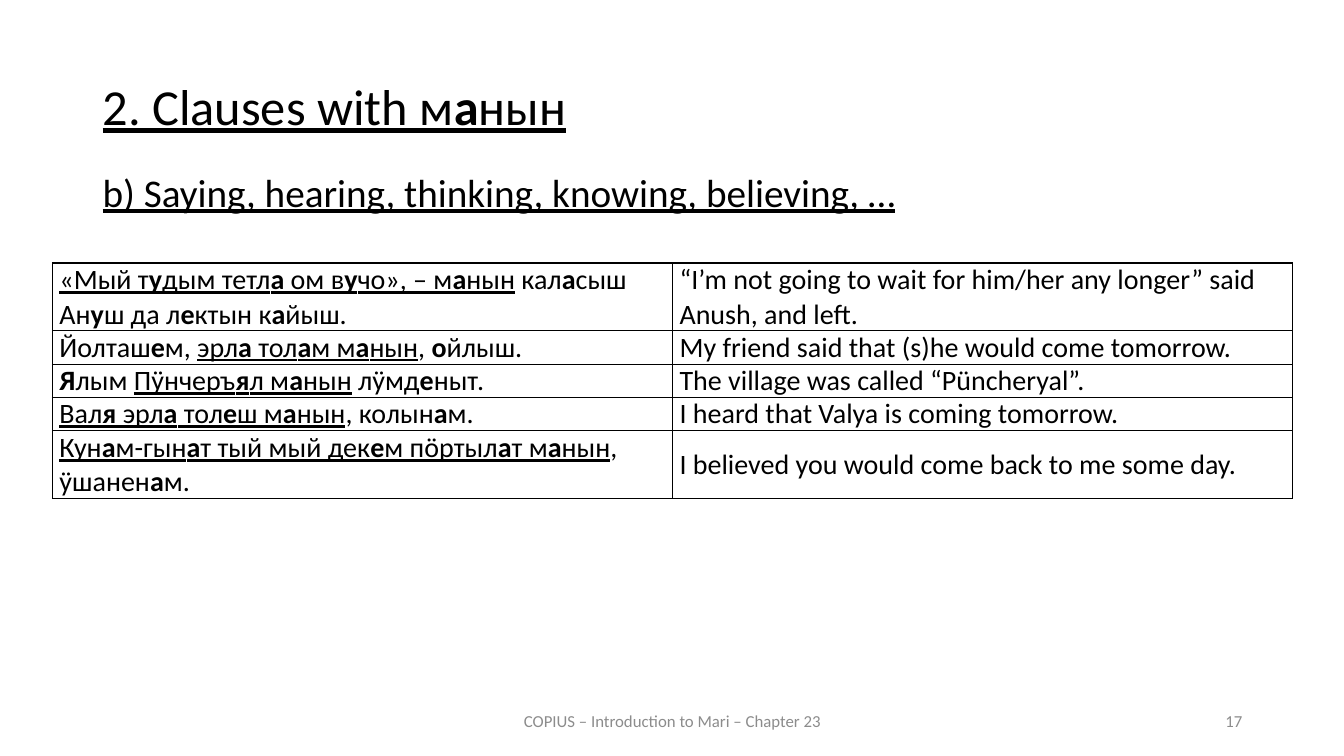
"""Builds the slide on Mari clauses with манын: headings, example tables and footer."""
from lxml import etree
from pptx import Presentation
from pptx.dml.color import RGBColor
from pptx.enum.text import MSO_ANCHOR, PP_ALIGN
from pptx.oxml.ns import qn
from pptx.util import Inches, Pt

LEFT, CENTER, RIGHT, JUSTIFY = PP_ALIGN.LEFT, PP_ALIGN.CENTER, PP_ALIGN.RIGHT, PP_ALIGN.JUSTIFY
TOP, MIDDLE = MSO_ANCHOR.TOP, MSO_ANCHOR.MIDDLE
FONT = "Calibri"
BLACK, GREY = "000000", "8C8C8C"

QUOTED_SPEECH = [
    ("_«Мый т*у*дым тетл*а* ом в*у*чо», – м*а*нын_ кал*а*сыш Ан*у*ш да л*е*ктын к*а*йыш.",
     "“I’m not going to wait for him/her any longer” said Anush, and left."),
    ("Йолташ*е*м, _эрл*а* тол*а*м м*а*нын_, *о*йлыш.",
     "My friend said that (s)he would come tomorrow."),
    ("*Я*лым _Пӱнчеръ*я*л м*а*нын_ лӱмд*е*ныт.",
     "The village was called “Püncheryal”."),
]
HEARING_BELIEVING = [
    ("_Вал*я* эрл*а* тол*е*ш м*а*нын_, колын*а*м.",
     "I heard that Valya is coming tomorrow."),
    ("_Кун*а*м-гын*а*т тый мый дек*е*м пӧртыл*а*т м*а*нын_, ӱшанен*а*м.",
     "I believed you would come back to me some day."),
]


def color(hex_string):
    return RGBColor.from_string(hex_string)


def write(frame, text, size=20, fill=BLACK, align=LEFT, line_spacing=None, before=None):
    """Write text in which * toggles bold and _ toggles underline."""
    frame.word_wrap = True
    paragraph = frame.paragraphs[0]
    paragraph.alignment = align
    if line_spacing:
        paragraph.line_spacing = line_spacing
    if before:
        paragraph.space_before = Pt(before)
    for u, underlined_part in enumerate(text.split("_")):
        if u:
            underline = not underline
        else:
            underline = False
        for b, part in enumerate(underlined_part.split("*")):
            if part:
                run = paragraph.add_run()
                run.text = part
                run.font.name = FONT
                run.font.size = Pt(size)
                run.font.color.rgb = color(fill)
                run.font.bold = b % 2 == 1
                run.font.underline = underline


class LessonSlide:
    """Holds the slide and draws its headings, tables and footer."""

    def __init__(self, slide):
        self.slide = slide

    def text(self, box, text, anchor=TOP, **style):
        frame = self.slide.shapes.add_textbox(*map(Inches, box)).text_frame
        frame.vertical_anchor = anchor
        write(frame, text, **style)

    def border(self, cell):
        properties = cell._tc.get_or_add_tcPr()
        for side in ("a:lnL", "a:lnR", "a:lnT", "a:lnB"):
            line = etree.SubElement(properties, qn(side), w=str(Pt(1)))
            solid = etree.SubElement(line, qn("a:solidFill"))
            etree.SubElement(solid, qn("a:srgbClr"), val=BLACK)

    def examples(self, top, pairs, heights):
        frame = self.slide.shapes.add_table(
            len(pairs), 2, Inches(0.52), Inches(top), Inches(12.3), Inches(sum(heights)))
        table = frame.table
        table.first_row = table.horz_banding = False
        for row, pair, height in zip(table.rows, pairs, heights):
            row.height = Inches(height)
            for cell, sentence in zip(row.cells, pair):
                cell.margin_left = cell.margin_right = Inches(0.07)
                cell.margin_top = cell.margin_bottom = 0
                cell.vertical_anchor = MIDDLE
                self.border(cell)
                cell.fill.background()
                write(cell.text_frame, sentence)


def main():
    deck = Presentation()
    deck.slide_width, deck.slide_height = Inches(13.33), Inches(7.5)
    lesson = LessonSlide(deck.slides.add_slide(deck.slide_layouts[6]))
    lesson.text((0.92, 0.76, 11.5, 0.83), "_2. Clauses with м*а*нын_",
                size=36, align=JUSTIFY, line_spacing=0.9, before=12)
    lesson.text((0.92, 1.67, 11.5, 0.58),
                "_b) Saying, hearing, thinking, knowing, believing, …_",
                size=28, line_spacing=0.9, before=10)
    lesson.examples(2.61, QUOTED_SPEECH, (0.67, 0.33, 0.33))
    lesson.examples(3.94, HEARING_BELIEVING, (0.33, 0.67))
    lesson.text((4.42, 6.95, 4.5, 0.4), "COPIUS – Introduction to Mari – Chapter 23",
                anchor=MIDDLE, size=12, fill=GREY, align=CENTER)
    lesson.text((9.42, 6.95, 3, 0.4), "17", anchor=MIDDLE, size=12, fill=GREY, align=RIGHT)
    deck.save("out.pptx")


if __name__ == "__main__":
    main()
